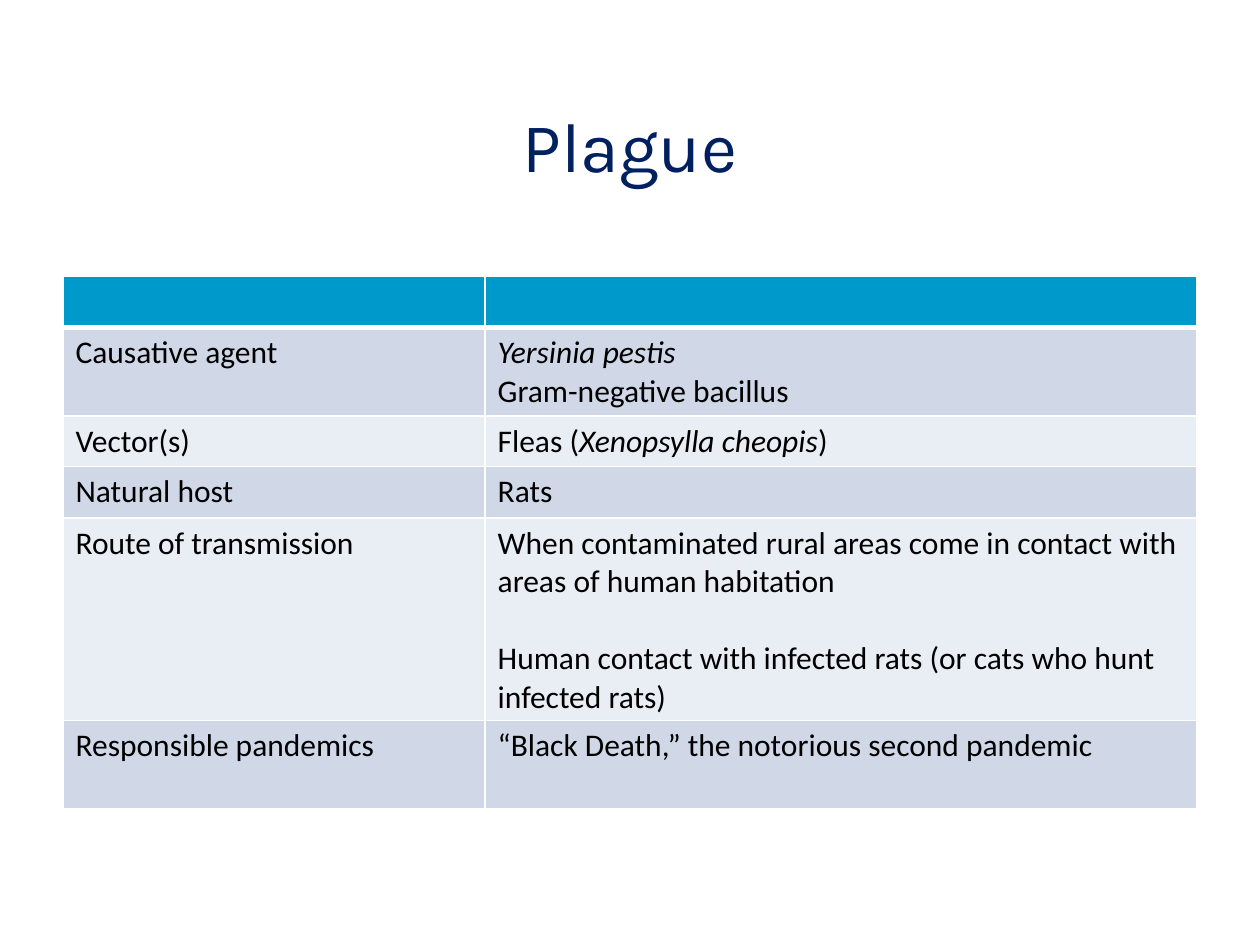
from dataclasses import dataclass

from lxml import etree
from pptx import Presentation
from pptx import util as u
from pptx.dml.color import RGBColor
from pptx.enum import text
from pptx.oxml.ns import qn


@dataclass(frozen=True)
class Theme:
    title_color: str = "002060"
    text_color: str = "000000"
    header: str = "0099CC"
    bands: tuple[str, str] = ("D0D8E8", "E9EDF4")
    border: str = "FFFFFF"
    title_font: str = "Karla"
    body_font: str = "Calibri"
    title_size: int = 40
    body_size: int = 18
    thin: int = 1
    thick: int = 3


@dataclass(frozen=True)
class Run:
    text: str
    italic: bool = False


@dataclass(frozen=True)
class Para:
    runs: tuple[Run, ...]
    space_before: float = 0


@dataclass(frozen=True)
class Row:
    height: float
    label: str
    details: tuple[Para, ...]


def plain(words: str, space_before: float = 0) -> Para:
    return Para((Run(words),), space_before)


THEME = Theme()
COLUMN_WIDTHS = (3.35, 5.65)
HEADER_HEIGHT = 0.41
ROWS = (
    Row(0.7, "Causative agent",
        (Para((Run("Yersinia pestis", italic=True),)), plain("Gram-negative bacillus"))),
    Row(0.4, "Vector(s)",
        (Para((Run("Fleas ("), Run("Xenopsylla cheopis", italic=True), Run(")"))),)),
    Row(0.41, "Natural host", (plain("Rats"),)),
    Row(1.6, "Route of transmission",
        (plain("When contaminated rural areas come in contact with areas of human habitation"),
         plain("Human contact with infected rats (or cats who hunt infected rats)",
               space_before=22))),
    Row(0.7, "Responsible pandemics",
        (plain("“Black Death,” the notorious second pandemic"),)),
)


def write(tf, paras: tuple[Para, ...], *, font: str = THEME.body_font,
          size: int = THEME.body_size, color: str = THEME.text_color,
          align=text.PP_ALIGN.LEFT) -> None:
    for i, para in enumerate(paras):
        p = tf.add_paragraph() if i else tf.paragraphs[0]
        p.alignment = align
        if para.space_before:
            p.space_before = u.Pt(para.space_before)
        for run in para.runs:
            r = p.add_run()
            r.text = run.text
            r.font.name = font
            r.font.size = u.Pt(size)
            r.font.italic = run.italic
            r.font.color.rgb = RGBColor.from_string(color)


def style_cell(cell, fill: str, top: int, bottom: int) -> None:
    """Set borders, then the fill, in the order the file format requires."""
    cell.margin_left = cell.margin_right = u.Inches(0.1)
    cell.margin_top = cell.margin_bottom = u.Inches(0.05)
    tc_pr = cell._tc.get_or_add_tcPr()
    widths = {"a:lnL": THEME.thin, "a:lnR": THEME.thin, "a:lnT": top, "a:lnB": bottom}
    for tag, width in widths.items():
        ln = etree.SubElement(tc_pr, qn(tag), w=str(u.Pt(width)))
        solid = etree.SubElement(ln, qn("a:solidFill"))
        etree.SubElement(solid, qn("a:srgbClr"), val=THEME.border)
    cell.fill.solid()
    cell.fill.fore_color.rgb = RGBColor.from_string(fill)


def add_title(s, words: str) -> None:
    sp = s.shapes.add_textbox(u.Inches(0.75), u.Inches(0.11), u.Inches(8.5), u.Inches(2.08))
    tf = sp.text_frame
    tf.word_wrap = True
    tf.vertical_anchor = text.MSO_ANCHOR.MIDDLE
    write(tf, (plain(words),), font=THEME.title_font, size=THEME.title_size,
          color=THEME.title_color, align=text.PP_ALIGN.CENTER)


def add_disease_table(s, rows: tuple[Row, ...]) -> None:
    heights = (HEADER_HEIGHT, *(row.height for row in rows))
    table = s.shapes.add_table(
        len(heights), len(COLUMN_WIDTHS), u.Inches(0.5), u.Inches(2.19),
        u.Inches(sum(COLUMN_WIDTHS)), u.Inches(sum(heights))).table
    for column, width in zip(table.columns, COLUMN_WIDTHS):
        column.width = u.Inches(width)
    for i, height in enumerate(heights):
        table.rows[i].height = u.Inches(height)
        fill = THEME.bands[(i - 1) % 2] if i else THEME.header
        for cell in table.rows[i].cells:
            style_cell(cell, fill,
                       top=THEME.thick if i == 1 else THEME.thin,
                       bottom=THEME.thick if i == 0 else THEME.thin)
    for i, row in enumerate(rows, start=1):
        write(table.cell(i, 0).text_frame, (plain(row.label),))
        write(table.cell(i, 1).text_frame, row.details)


def main() -> None:
    prs = Presentation()
    prs.slide_width, prs.slide_height = u.Inches(10), u.Inches(7.5)
    s = prs.slides.add_slide(prs.slide_layouts[6])
    add_title(s, "Plague")
    add_disease_table(s, ROWS)
    prs.save("out.pptx")


if __name__ == "__main__":
    main()
